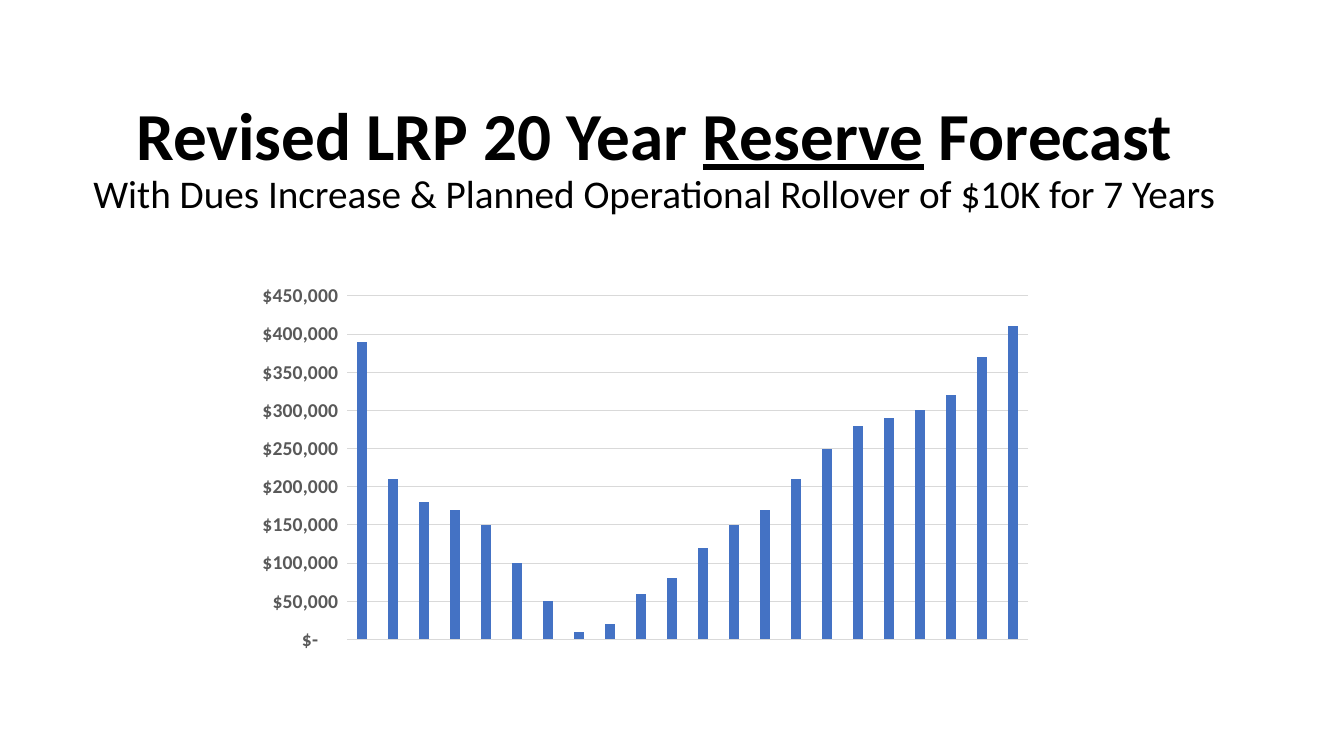
import pptx
import pptx.chart.data
import pptx.dml.color
import pptx.enum.chart
import pptx.enum.text
import pptx.util

Pt = pptx.util.Pt

RESERVES = [
    390000, 210000, 180000, 170000, 150000, 100000, 50000, 10000,
    20000, 60000, 80000, 120000, 150000, 170000, 210000, 250000,
    280000, 290000, 300000, 320000, 370000, 410000,
]
DOLLARS = r'_("$"* #,##0_);_("$"* \(#,##0\);_("$"* "-"??_);_(@_)'


def colour(value):
    return pptx.dml.color.RGBColor.from_string(value)


def format_font(font, size, ink, bold=False, underline=False):
    font.name = "Calibri"
    font.size = Pt(size)
    font.bold = bold
    font.underline = underline
    font.color.rgb = colour(ink)


def add_text(para, text, **style):
    span = para.add_run()
    span.text = text
    format_font(span.font, **style)


class ForecastSlide:
    ink = "000000"
    label_ink = "595959"
    grid_ink = "D9D9D9"
    bar_fill = "4472C4"

    def __init__(self, deck):
        self.page = deck.slides.add_slide(deck.slide_layouts[5])

    def title(self, left, top, width, height, lines):
        box = self.page.shapes.title
        box.left, box.top = Pt(left), Pt(top)
        box.width, box.height = Pt(width), Pt(height)
        frame = box.text_frame
        frame.word_wrap = True
        frame.auto_size = pptx.enum.text.MSO_AUTO_SIZE.NONE
        frame.vertical_anchor = pptx.enum.text.MSO_ANCHOR.MIDDLE
        para = frame.paragraphs[0]
        para.alignment = pptx.enum.text.PP_ALIGN.CENTER
        para.line_spacing = 0.9
        for number, spans in enumerate(lines):
            if number:
                para.add_line_break()
            for text, style in spans:
                add_text(para, text, ink=self.ink, **style)

    def column_chart(self, left, top, width, height, values):
        data = pptx.chart.data.CategoryChartData(number_format=DOLLARS)
        data.categories = [str(year) for year in range(1, len(values) + 1)]
        data.add_series("Series 1", values)
        chart = self.page.shapes.add_chart(
            pptx.enum.chart.XL_CHART_TYPE.COLUMN_CLUSTERED,
            Pt(left), Pt(top), Pt(width), Pt(height), data,
        ).chart
        chart.has_legend = False
        chart.has_title = False
        format_font(chart.font, size=10, ink=self.ink)

        # Bars
        plot = chart.plots[0]
        plot.gap_width = 219
        plot.overlap = -27
        plot.vary_by_categories = False
        bars = plot.series[0]
        bars.invert_if_negative = False
        bars.format.fill.solid()
        bars.format.fill.fore_color.rgb = colour(self.bar_fill)

        # Axes
        chart.category_axis.visible = False
        axis = chart.value_axis
        axis.minimum_scale, axis.maximum_scale = 0, 450000
        axis.major_unit = 50000
        axis.major_tick_mark = pptx.enum.chart.XL_TICK_MARK.NONE
        axis.minor_tick_mark = pptx.enum.chart.XL_TICK_MARK.NONE
        axis.format.line.fill.background()
        axis.tick_labels.number_format = DOLLARS
        axis.tick_labels.number_format_is_linked = False
        format_font(axis.tick_labels.font, size=14, ink=self.label_ink, bold=True)
        axis.has_major_gridlines = True
        grid = axis.major_gridlines.format.line
        grid.width = Pt(0.75)
        grid.color.rgb = colour(self.grid_ink)


def main():
    deck = pptx.Presentation()
    deck.slide_width, deck.slide_height = Pt(960), Pt(540)
    slide = ForecastSlide(deck)

    # Heading and subheading
    heading = {"size": 48, "bold": True}
    slide.title(53.3, 62, 828, 104.4, [
        [
            ("Revised LRP 20 Year ", heading),
            ("Reserve", {**heading, "underline": True}),
            (" Forecast", heading),
        ],
        [(
            "With Dues Increase & Planned Operational Rollover of $10K for 7 Years",
            {"size": 28},
        )],
    ])

    # Reserve balance by year
    slide.column_chart(172.8, 197.3, 573.1, 273.6, RESERVES)

    deck.save("out.pptx")


if __name__ == "__main__":
    main()
